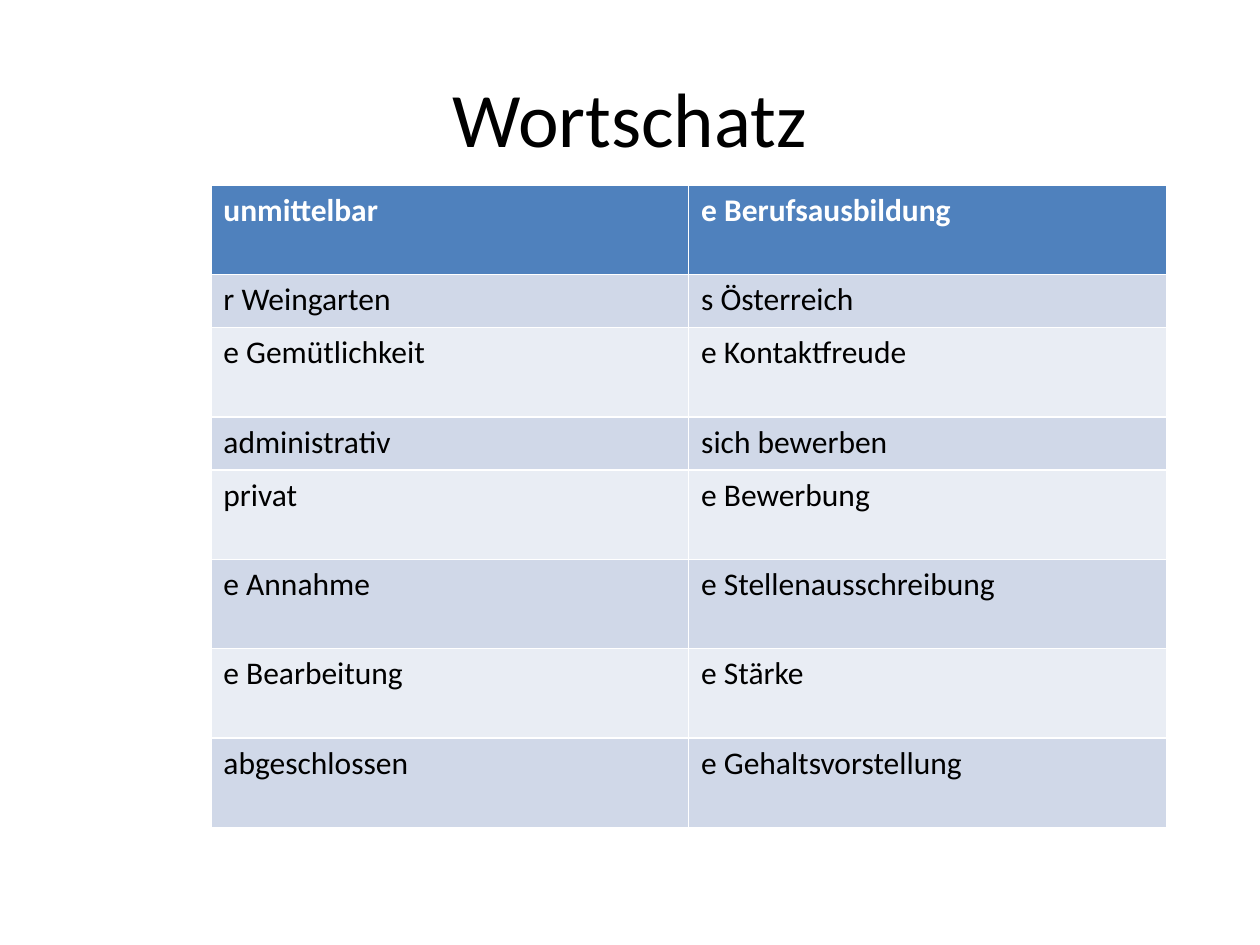
from pptx import Presentation
from pptx.dml.color import RGBColor
from pptx.enum.text import MSO_ANCHOR as Anchor, PP_ALIGN as Align
from pptx.util import Pt

FONT = "Calibri"
BLACK, WHITE = "000000", "FFFFFF"
HEADER_FILL = "4F81BD"
BAND_FILLS = ("E9EDF4", "D0D8E8")
TALL, SHORT = 51.1, 30.3

# Left word, right word, row height
WORDS = [
    ("unmittelbar", "e Berufsausbildung", TALL),
    ("r Weingarten", "s Österreich", SHORT),
    ("e Gemütlichkeit", "e Kontaktfreude", TALL),
    ("administrativ", "sich bewerben", SHORT),
    ("privat", "e Bewerbung", TALL),
    ("e Annahme", "e Stellenausschreibung", TALL),
    ("e Bearbeitung", "e Stärke", TALL),
    ("abgeschlossen", "e Gehaltsvorstellung", TALL),
]


def color(value):
    return RGBColor.from_string(value)


def add_text(para, text, size, ink, bold=False):
    span = para.add_run()
    span.text = text
    span.font.name = FONT
    span.font.size = Pt(size)
    span.font.bold = bold
    span.font.color.rgb = color(ink)


def add_title(page, left, top, width, height):
    box = page.shapes.add_textbox(Pt(left), Pt(top), Pt(width), Pt(height))
    frame = box.text_frame
    frame.word_wrap = True
    frame.vertical_anchor = Anchor.MIDDLE
    para = frame.paragraphs[0]
    para.alignment = Align.CENTER
    add_text(para, "Wortschatz", 44, BLACK)


def add_word_table(page, left, top, width):
    height = sum(row_height for _, _, row_height in WORDS)
    # The default table style supplies the white borders
    table = page.shapes.add_table(
        len(WORDS), 2, Pt(left), Pt(top), Pt(width), Pt(height)).table
    for column in table.columns:
        column.width = Pt(width / 2)

    for index, (*words, row_height) in enumerate(WORDS):
        table.rows[index].height = Pt(row_height)
        header = index == 0
        fill = HEADER_FILL if header else BAND_FILLS[index % 2]
        for column, word in enumerate(words):
            cell = table.cell(index, column)
            cell.fill.solid()
            cell.fill.fore_color.rgb = color(fill)
            add_text(cell.text_frame.paragraphs[0], word, 18,
                     WHITE if header else BLACK, bold=header)


def main():
    deck = Presentation()
    deck.slide_width, deck.slide_height = Pt(720), Pt(540)
    page = deck.slides.add_slide(deck.slide_layouts[6])
    add_title(page, 36, 21.6, 648, 90)
    add_word_table(page, 120.5, 105.8, 546)
    deck.save("out.pptx")


if __name__ == "__main__":
    main()
